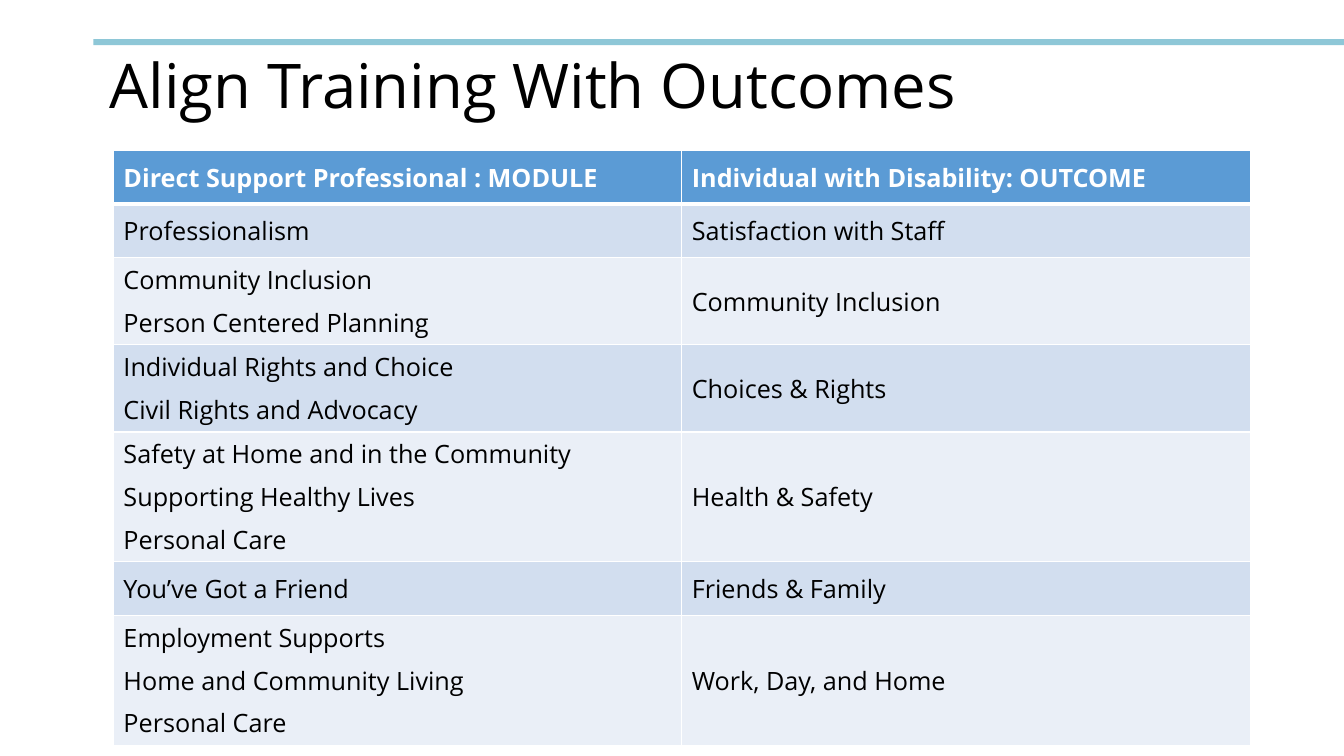
from lxml.etree import SubElement
from pptx import Presentation
from pptx.dml.color import RGBColor
from pptx.enum.shapes import MSO_SHAPE as Preset
from pptx.enum.text import MSO_ANCHOR as Anchor, MSO_AUTO_SIZE as AutoSize, PP_ALIGN as Align
from pptx.oxml.ns import qn
from pptx.util import Pt

WHITE, BLACK, TEAL = "FFFFFF", "000000", "8EC7D7"
HEADER_BLUE, BAND_DARK, BAND_LIGHT = "5B9BD5", "D2DEEF", "EAEFF7"

HEADINGS = ("Direct Support Professional : MODULE",
            "Individual with Disability: OUTCOME")
ALIGNMENT = [
    (["Professionalism"], "Satisfaction with Staff"),
    (["Community Inclusion", "Person Centered Planning"], "Community Inclusion"),
    (["Individual Rights and Choice", "Civil Rights and Advocacy"], "Choices & Rights"),
    (["Safety at Home and in the Community", "Supporting Healthy Lives", "Personal Care"],
     "Health & Safety"),
    (["You’ve Got a Friend"], "Friends & Family"),
    (["Employment Supports", "Home and Community Living", "Personal Care"],
     "Work, Day, and Home"),
]
# Row height by number of modules in the row
ROW_HEIGHTS = {1: 38.3, 2: 52.6, 3: 74.9}


def color(hex_code):
    return RGBColor.from_string(hex_code)


def write(frame, lines, size=18, ink=BLACK, bold=False, after=0, spacing=None):
    """Fill a text frame with one paragraph per line."""
    for index, line in enumerate(lines):
        paragraph = frame.paragraphs[0] if index == 0 else frame.add_paragraph()
        paragraph.alignment = Align.LEFT
        paragraph.space_after = Pt(after)
        if spacing:
            paragraph.line_spacing = spacing
        run = paragraph.add_run()
        run.text = line
        run.font.name = "Open Sans"
        run.font.size = Pt(size)
        run.font.bold = bold
        run.font.color.rgb = color(ink)


class TrainingSlide:
    def __init__(self, deck):
        self.slide = deck.slides.add_slide(deck.slide_layouts[5])

    def bar(self, left, top, width, height, fill):
        rule = self.slide.shapes.add_shape(
            Preset.RECTANGLE, Pt(left), Pt(top), Pt(width), Pt(height))
        rule.shadow.inherit = False
        rule.fill.solid()
        rule.fill.fore_color.rgb = color(fill)
        rule.line.fill.background()

    def title(self, text, left, top, width, height):
        heading = self.slide.shapes.title
        heading.left, heading.top = Pt(left), Pt(top)
        heading.width, heading.height = Pt(width), Pt(height)
        frame = heading.text_frame
        frame.word_wrap = True
        frame.auto_size = AutoSize.NONE
        frame.vertical_anchor = Anchor.TOP
        frame.margin_top = 0
        write(frame, [text], size=44, spacing=0.9)

    def cell(self, cell, lines, fill, bottom=1, **text_format):
        cell.vertical_anchor = Anchor.MIDDLE
        properties = cell._tc.get_or_add_tcPr()
        for side, weight in (("L", 1), ("R", 1), ("T", 1), ("B", bottom)):
            border = SubElement(properties, qn(f"a:ln{side}"), w=str(Pt(weight)))
            paint = SubElement(border, qn("a:solidFill"))
            SubElement(paint, qn("a:srgbClr"), val=WHITE)
        cell.fill.solid()
        cell.fill.fore_color.rgb = color(fill)
        write(cell.text_frame, lines, **text_format)

    def table(self, headings, rows, left, top, width):
        heights = [ROW_HEIGHTS[1]] + [ROW_HEIGHTS[len(modules)] for modules, _ in rows]
        grid = self.slide.shapes.add_table(
            len(heights), len(headings), Pt(left), Pt(top), Pt(width), Pt(sum(heights))).table
        for row, height in zip(grid.rows, heights):
            row.height = Pt(height)
        # Header row
        for column, heading in enumerate(headings):
            self.cell(grid.cell(0, column), [heading], HEADER_BLUE, bottom=3,
                      ink=WHITE, bold=True)
        # Banded rows: modules beside their outcome
        for index, (modules, outcome) in enumerate(rows, 1):
            band = BAND_DARK if index % 2 else BAND_LIGHT
            self.cell(grid.cell(index, 0), modules, band, after=6)
            self.cell(grid.cell(index, 1), [outcome], band)


def main():
    deck = Presentation()
    deck.slide_width, deck.slide_height = Pt(960), Pt(540)
    page = TrainingSlide(deck)
    page.bar(66.8, 28, 893.2, 4.3, TEAL)
    page.title("Align Training With Outcomes", 71.3, 39.6, 833, 65.5)
    page.table(HEADINGS, ALIGNMENT, 81, 107.5, 812)
    deck.save("out.pptx")


if __name__ == "__main__":
    main()
